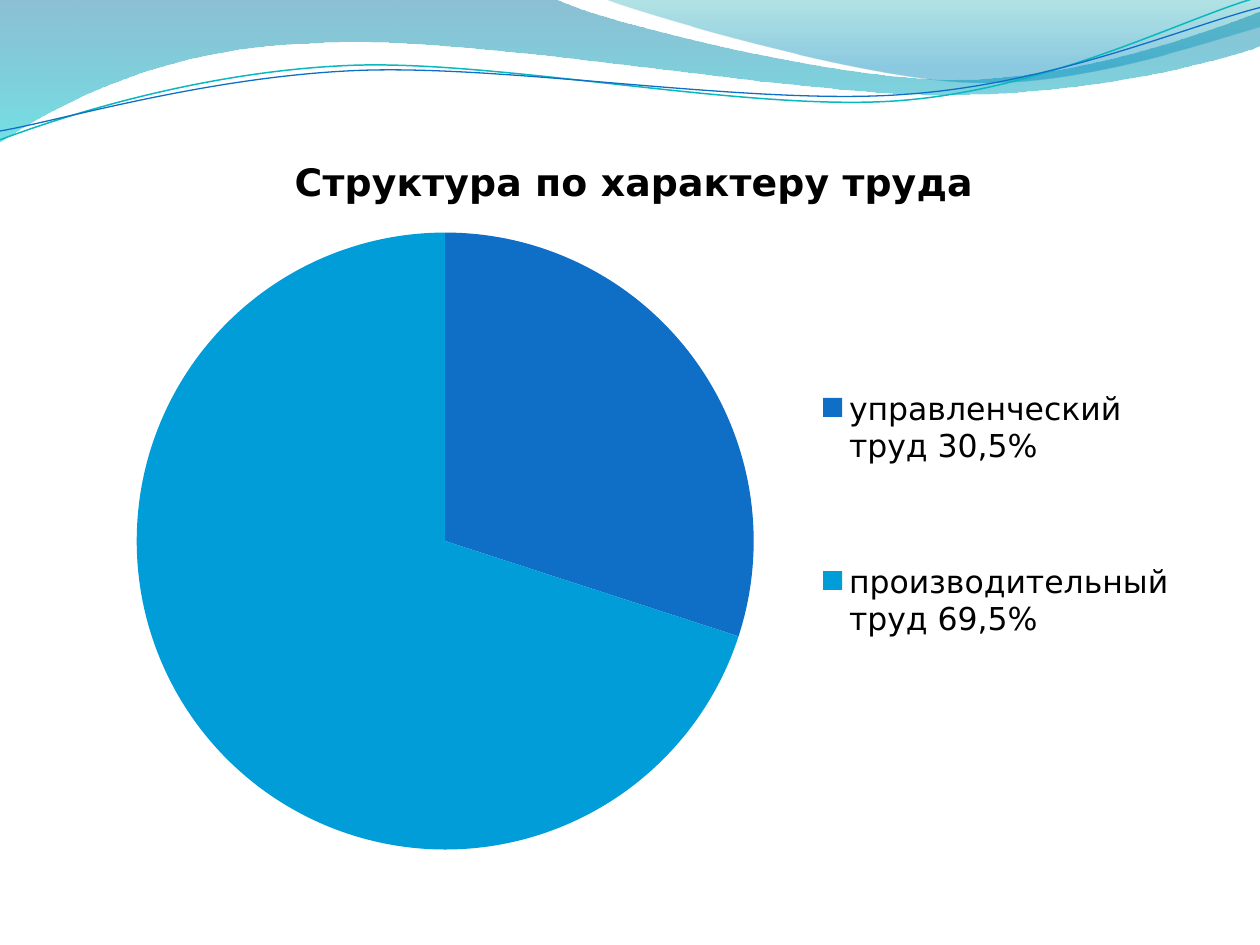
from lxml.etree import SubElement
from pptx import Presentation
from pptx.chart.data import CategoryChartData
from pptx.dml.color import RGBColor
from pptx.enum.chart import XL_CHART_TYPE as ChartType, XL_LEGEND_POSITION as LegendPos
from pptx.oxml import parse_xml
from pptx.oxml.ns import nsdecls, qn
from pptx.util import Inches, Pt

W, H = 10, 7.5
FONT = "DejaVu Sans"
COLORS = {"text": "000000", "blue": "0F6FC6", "sky": "009DD9", "teal": "0AB8BF",
          "deep": "0074A1", "aqua": "00C6CF", "sea": "00A1A9", "azure": "008BBF"}

# Wave outlines in inches: a pair is a line end, a six is a cubic curve
WIDE_WAVE = [(0, 0), (4.4, -0.01), (4.76, 0.17, 6.64, 0.63, 7.58, 0.63),
             (8.53, 0.63, 9.58, 0.26, 10, 0.09), (10.01, 0.36),
             (9.83, 0.44, 8.7, 0.76, 7.46, 0.75), (6.22, 0.75, 3.82, 0.28, 2.57, 0.34),
             (1.29, 0.36, 0.46, 0.83, -0.01, 1.13), (0, 0)]
RIGHT_WAVE = [(4.79, -0.01), (5.09, 0.11, 6.82, 0.62, 7.69, 0.65),
              (8.56, 0.69, 9.61, 0.32, 10, 0.21), (10, 0), (4.79, -0.01)]
TEAL_LINE = [(0, 1.11), (0.48, 0.93, 1.58, 0.57, 2.77, 0.52),
             (3.95, 0.47, 5.93, 0.89, 7.13, 0.8), (8.33, 0.71, 9.38, 0.15, 9.98, -0.02)]
BLUE_LINE = [(0, 1.04), (0.47, 0.96, 1.64, 0.61, 2.83, 0.56),
             (4.03, 0.51, 5.97, 0.84, 7.17, 0.75), (8.36, 0.67, 9.41, 0.21, 10, 0.06)]


def rgb(name):
    return RGBColor.from_string(COLORS[name])


def bend(s, segments):
    """Turn the straight pieces of a freeform into the cubic curves given."""
    lines = list(s._element.iter(qn("a:lnTo")))
    for line, seg in zip(lines, segments[1:]):
        if len(seg) == 2:
            continue
        curve = line.makeelement(qn("a:cubicBezTo"))
        for x, y in zip(seg[::2], seg[1::2]):
            pt = SubElement(curve, qn("a:pt"))
            pt.set("x", str(Inches(x) - s.left))
            pt.set("y", str(Inches(y) - s.top))
        line.getparent().replace(line, curve)


def add_outline(slide, segments, close):
    ends = [tuple(map(Inches, seg[-2:])) for seg in segments]
    builder = slide.shapes.build_freeform(*ends[0], scale=1)
    builder.add_line_segments(ends[1:], close=close)
    s = builder.convert_to_shape()
    bend(s, segments)
    s.shadow.inherit = False
    return s


def add_wave(slide, segments, stops):
    """Filled wave; stops are (position %, colour, opacity %), top to bottom."""
    s = add_outline(slide, segments, True)
    s.line.fill.background()
    s.fill.gradient()
    gs = "".join(f'<a:gs pos="{pos * 1000}"><a:srgbClr val="{COLORS[c]}">'
                 f'<a:alpha val="{alpha * 1000}"/></a:srgbClr></a:gs>'
                 for pos, c, alpha in stops)
    grad = parse_xml(f'<a:gradFill {nsdecls("a")} rotWithShape="1"><a:gsLst>{gs}</a:gsLst>'
                     '<a:lin ang="5400000" scaled="0"/></a:gradFill>')
    old = s._element.spPr.find(qn("a:gradFill"))
    old.getparent().replace(old, grad)


def add_wave_line(slide, segments, color, width):
    s = add_outline(slide, segments, False)
    s.fill.background()
    s.line.color.rgb = rgb(color)
    s.line.width = Pt(width)


def format_font(font, size, bold=False, color="text"):
    font.name, font.size, font.bold = FONT, Pt(size), bold
    font.color.rgb = rgb(color)


def write(tf, text, **fmt):
    r = tf.paragraphs[0].add_run()
    r.text = text
    format_font(r.font, **fmt)


def set_layout(element, inner=False, **shares):
    """Place a chart part by shares (x, y, w, h) of the chart's size."""
    layout = element.find(qn("c:layout"))
    if layout is None:
        layout = element.makeelement(qn("c:layout"))
        pos = element.find(qn("c:legendPos"))
        element.insert(0 if pos is None else element.index(pos) + 1, layout)
    manual = SubElement(layout, qn("c:manualLayout"))
    if inner:
        SubElement(manual, qn("c:layoutTarget")).set("val", "inner")
    for axis in "xy":
        SubElement(manual, qn(f"c:{axis}Mode")).set("val", "edge")
    for key, value in shares.items():
        SubElement(manual, qn(f"c:{key}")).set("val", str(value))


def add_pie(slide, title, shares, colors, box):
    data = CategoryChartData()
    data.categories = list(shares)
    data.add_series(title, list(shares.values()))
    chart = slide.shapes.add_chart(ChartType.PIE, *map(Inches, box), data).chart
    format_font(chart.font, size=18)
    chart.has_title = True
    write(chart.chart_title.text_frame, title, size=21.6, bold=True)
    chart.chart_title.include_in_layout = False

    plot = chart.plots[0]
    plot.vary_by_categories = True
    for i, color in enumerate(colors):
        fill = plot.series[0].points[i].format.fill
        fill.solid()
        fill.fore_color.rgb = rgb(color)

    chart.has_legend = True
    chart.legend.position = LegendPos.RIGHT
    chart.legend.include_in_layout = False
    format_font(chart.legend.font, size=18)
    set_layout(chart.legend._element, x=0.66, y=0.22, w=0.33, h=0.6)
    set_layout(chart._chartSpace.chart.plotArea, inner=True, x=0.05, y=0.14, w=0.56, h=0.83)


def main():
    prs = Presentation()
    prs.slide_width, prs.slide_height = Inches(W), Inches(H)
    slide = prs.slides.add_slide(prs.slide_layouts[6])

    # Wave decoration along the top
    add_wave(slide, WIDE_WAVE, [(0, "deep", 45), (100, "aqua", 55)])
    add_wave(slide, RIGHT_WAVE, [(0, "sea", 30), (80, "azure", 45)])
    add_wave_line(slide, TEAL_LINE, "teal", 0.85)
    add_wave_line(slide, BLUE_LINE, "blue", 0.75)

    # Pie of labour by its nature
    add_pie(slide, "Структура по характеру труда",
            {"управленческий труд 30,5%": 30, "производительный труд 69,5%": 70},
            ["blue", "sky"], (0.62, 1.02, 8.83, 5.9))
    prs.save("out.pptx")


if __name__ == "__main__":
    main()
